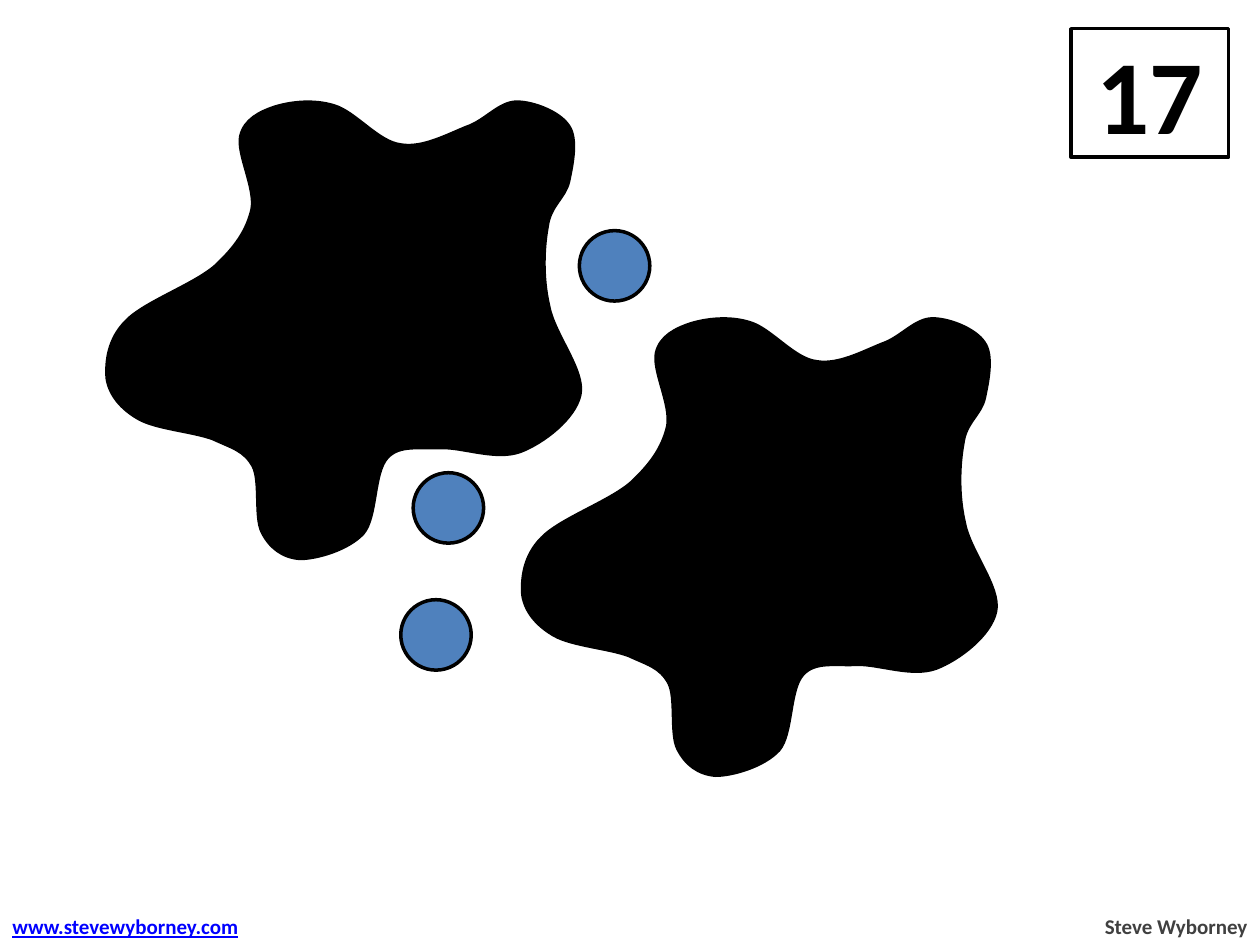
from lxml.etree import SubElement
from pptx import Presentation
from pptx.dml.color import RGBColor
from pptx.enum.shapes import MSO_SHAPE as Shape
from pptx.enum.text import MSO_ANCHOR as Anchor, MSO_AUTO_SIZE as AutoSize, PP_ALIGN as Align
from pptx.oxml.ns import qn
from pptx.util import Cm, Pt

FONT = "Calibri"
BLACK, WHITE, BLUE = "000000", "FFFFFF", "4F81BD"
GREY, LINK_BLUE = "404040", "0000FF"
DOT_SIZE = 1.42

# Dots and blots, in cm from the corner of the field
DOTS = [
    (3, 3.3), (6.17, 7.47), (13.36, 6.35), (7.67, 5.05), (11.73, 8.61), (11.91, 11.38),
    (11.2, 4.9), (5.23, 4.67), (0.48, 4.52), (3.35, 6.93), (5.92, 10.03), (8.81, 9.04),
    (3.12, 0.53), (15.62, 4.95), (9.52, 2.59), (6.96, 1.65), (15.67, 9.32),
]
BLOTS = [(0, 0), (8.38, 4.37)]

# Blot outline: a start point, then three Bézier points for each curve
BLOT_WIDTH, BLOT_UNITS = 9.53, 375
BLOT_START = (25, 251)
BLOT_CURVES = [
    (11, 243), (2, 232), (0, 219), (-1, 206), (1, 188), (15, 174),
    (29, 159), (69, 145), (86, 130), (102, 115), (111, 102), (115, 85),
    (118, 68), (103, 41), (106, 27), (109, 14), (121, 8), (133, 4),
    (146, 0), (164, -2), (180, 3), (197, 8), (215, 32), (233, 34),
    (250, 37), (270, 26), (285, 20), (300, 15), (311, 0), (325, 0),
    (338, 0), (359, 8), (366, 19), (373, 29), (369, 49), (366, 63),
    (363, 76), (351, 82), (349, 99), (346, 115), (345, 139), (350, 161),
    (354, 184), (379, 213), (375, 232), (371, 251), (346, 270), (328, 277),
    (309, 284), (284, 274), (266, 274), (248, 275), (232, 271), (222, 282),
    (211, 294), (214, 329), (203, 342), (191, 355), (166, 362), (153, 362),
    (139, 361), (129, 353), (123, 341), (117, 329), (122, 301), (116, 289),
    (109, 276), (99, 274), (84, 267), (68, 261), (39, 259), (25, 251),
]


def rgb(color):
    return RGBColor.from_string(color)


def paint(sp, fill):
    """Flat fill with a black outline."""
    sp.shadow.inherit = False
    sp.fill.solid()
    sp.fill.fore_color.rgb = rgb(fill)
    sp.line.color.rgb = rgb(BLACK)
    sp.line.width = Pt(2)


def write(tf, text, size, color, align, underline=False):
    p = tf.paragraphs[0]
    p.text = text
    p.alignment = align
    p.font.name, p.font.size = FONT, Pt(size)
    p.font.bold, p.font.underline = True, underline
    p.font.color.rgb = rgb(color)


def curve(sp):
    """Turn each three line segments of a freeform into one Bézier curve."""
    path = next(sp._element.iter(qn("a:path")))
    lines = path.findall(qn("a:lnTo"))
    close = path.find(qn("a:close"))
    for i in range(0, len(lines), 3):
        bezier = SubElement(path, qn("a:cubicBezTo"))
        for line in lines[i:i + 3]:
            bezier.append(line[0])
            path.remove(line)
    path.append(close)


def add_blot(s, x, y):
    builder = s.shapes.build_freeform(*BLOT_START, scale=Cm(BLOT_WIDTH) / BLOT_UNITS)
    builder.add_line_segments(BLOT_CURVES, close=True)
    sp = builder.convert_to_shape(Cm(x), Cm(y))
    curve(sp)
    paint(sp, BLACK)


def add_field(s, left, top):
    """Dots, with the blots on top of them."""
    for x, y in DOTS:
        sp = s.shapes.add_shape(Shape.OVAL, Cm(left + x), Cm(top + y), Cm(DOT_SIZE), Cm(DOT_SIZE))
        paint(sp, BLUE)
    for x, y in BLOTS:
        add_blot(s, left + x, top + y)


def add_total(s, left, top, width, height):
    """Framed number of dots."""
    sp = s.shapes.add_shape(Shape.RECTANGLE, Cm(left), Cm(top), Cm(width), Cm(height))
    paint(sp, WHITE)
    sp.text_frame.vertical_anchor = Anchor.MIDDLE
    write(sp.text_frame, "17", 60, BLACK, Align.CENTER)


def add_footer(s, left, top, width, height):
    """Web address on the left, author on the right."""
    site_width, author_width = 5.2, 3.4
    parts = [
        (left, site_width, "www.stevewyborney.com", LINK_BLUE, Align.LEFT, True),
        (left + width - author_width, author_width, "Steve Wyborney", GREY, Align.RIGHT, False),
    ]
    for x, part_width, text, color, align, underline in parts:
        tf = s.shapes.add_textbox(Cm(x), Cm(top), Cm(part_width), Cm(height)).text_frame
        tf.word_wrap = False
        tf.auto_size = AutoSize.SHAPE_TO_FIT_TEXT
        write(tf, text, 12, color, align, underline)


def main():
    prs = Presentation()
    prs.slide_width, prs.slide_height = Cm(25.4), Cm(19.05)
    s = prs.slides.add_slide(prs.slide_layouts[6])
    add_total(s, 21.59, 0.58, 3.18, 2.59)
    add_footer(s, 0, 18.29, 25.4, 0.76)
    add_field(s, 2.16, 2.06)
    prs.save("out.pptx")


if __name__ == "__main__":
    main()
